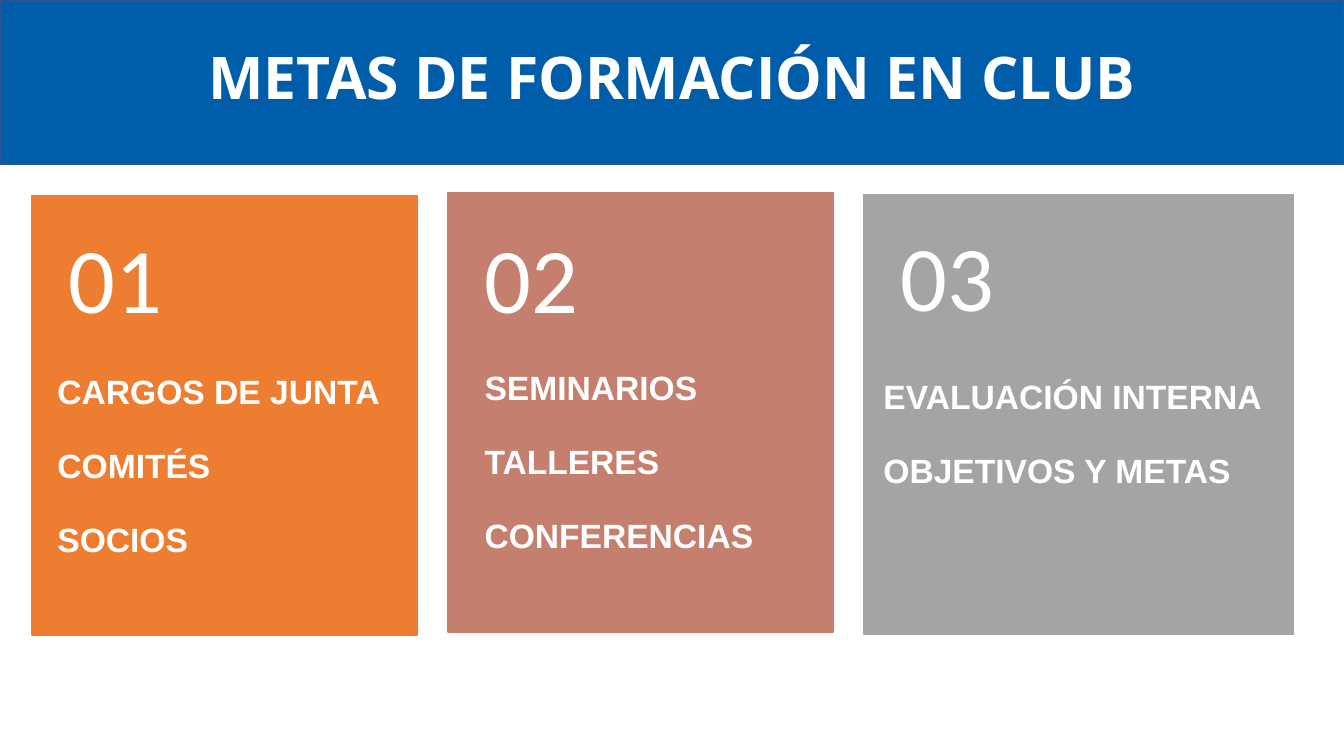
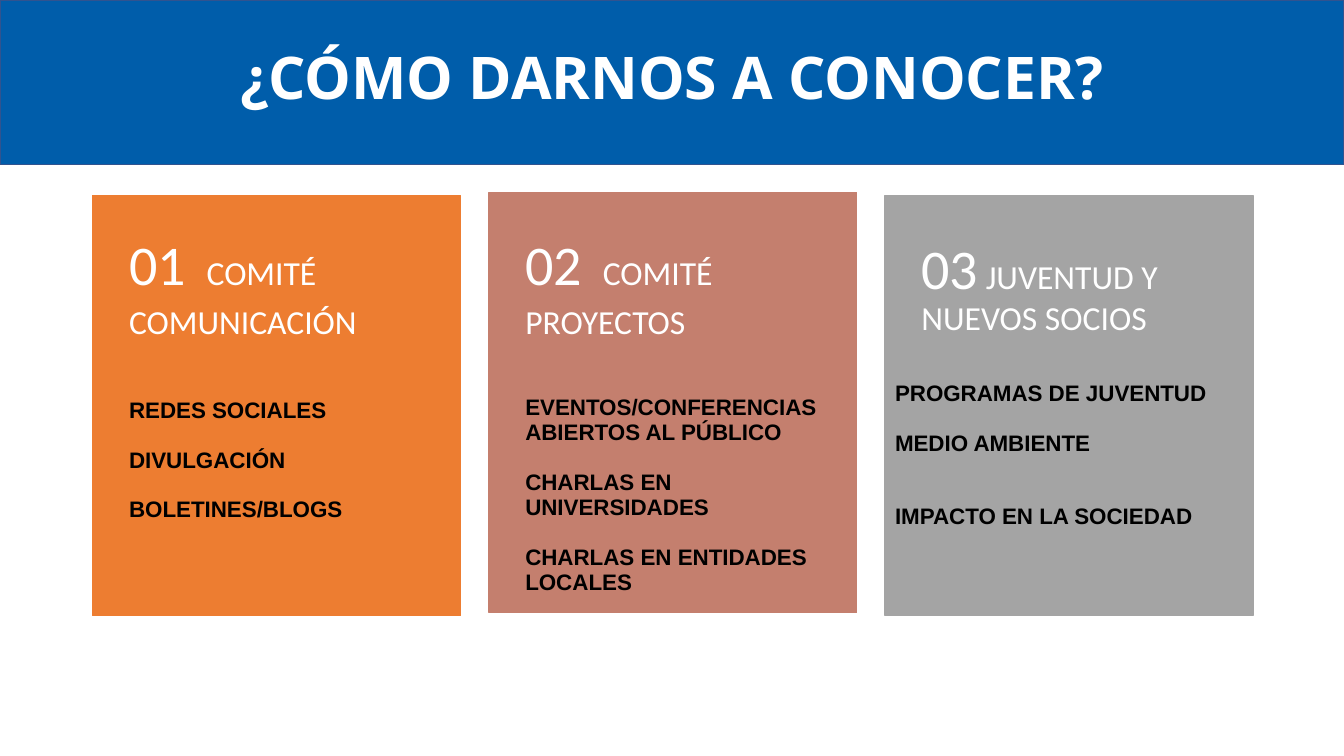
from pptx import Presentation
from pptx.dml.color import RGBColor
from pptx.enum.shapes import MSO_SHAPE
from pptx.enum.text import MSO_ANCHOR, PP_ALIGN
from pptx.util import Pt

WIDE, HIGH = 960, 540
BLUE, EDGE, WHITE, BLACK = "005DAA", "31538F", "FFFFFF", "000000"
FILLS = ["ED7D31", "C47F6E", "A4A4A4"]
TOP, MID, BASE = MSO_ANCHOR.TOP, MSO_ANCHOR.MIDDLE, MSO_ANCHOR.BOTTOM


def tint(code):
    return RGBColor.from_string(code)


def write(frame, paras, font="Arial", color=WHITE, bold=False, align=PP_ALIGN.LEFT,
          anchor=TOP, inset=(26, 0, 26, 0), lead=0.9, gap=0):
    frame.word_wrap = True
    frame.vertical_anchor = anchor
    (frame.margin_left, frame.margin_top,
     frame.margin_right, frame.margin_bottom) = [Pt(side) for side in inset]
    for index, runs in enumerate(paras):
        para = frame.add_paragraph() if index else frame.paragraphs[0]
        para.alignment = align
        para.line_spacing = lead
        para.space_before = Pt(gap if index else 0)
        for text, size in runs:
            run = para.add_run()
            run.text = text
            run.font.name = font
            run.font.size = Pt(size)
            run.font.bold = bold
            run.font.color.rgb = tint(color)


class Deck:
    """Hold the shared style and the slide being built."""

    def __init__(self):
        self.show = Presentation()
        self.show.slide_width, self.show.slide_height = Pt(WIDE), Pt(HIGH)
        self.slide = None

    def start(self, title):
        self.slide = self.show.slides.add_slide(self.show.slide_layouts[6])
        self.block(0, 0, WIDE, 117.5, BLUE, EDGE)
        write(self.box(0, 33.8, WIDE, 49.7), [[(title, 42)]], font="Open Sans",
              bold=True, align=PP_ALIGN.CENTER, anchor=BASE, inset=(7.2, 3.6, 7.2, 3.6))

    def block(self, left, top, width, height, fill, edge):
        shape = self.slide.shapes.add_shape(
            MSO_SHAPE.RECTANGLE, Pt(left), Pt(top), Pt(width), Pt(height))
        shape.shadow.inherit = False
        shape.fill.solid()
        shape.fill.fore_color.rgb = tint(fill)
        shape.line.color.rgb = tint(edge)
        shape.line.width = Pt(1)

    def box(self, left, top, width, height):
        return self.slide.shapes.add_textbox(
            Pt(left), Pt(top), Pt(width), Pt(height)).text_frame

    def head(self, left, top, width, height, runs):
        write(self.box(left, top, width, height), [runs], font="Calibri",
              anchor=MID, inset=(26, 13, 26, 13))

    def points(self, left, top, width, items, size, color, inset):
        write(self.box(left, top, width, 165), [[(item, size)] for item in items],
              color=color, bold=True, lead=0.94, gap=size * 1.08,
              inset=(inset, 0, 7.2, 0))


def goals(deck):
    deck.start("METAS DE FORMACIÓN EN CLUB")
    cards = [
        (139.7, 275, 139.7, 267, 18, ["CARGOS DE JUNTA", "COMITÉS", "SOCIOS"]),
        (137.5, 275, 139.7, 264.3, 26, ["SEMINARIOS", "TALLERES", "CONFERENCIAS"]),
        (139, 306.7, 138.2, 271, 13.9, ["EVALUACIÓN INTERNA", "OBJETIVOS Y METAS"]),
    ]
    for index, (top, width, high, low, inset, items) in enumerate(cards):
        left = 23 + 297.1 * index
        deck.block(left, top, width, 314, FILLS[index], FILLS[index])
        deck.head(left, high, 275, 125.3, [(f"0{index + 1}", 66)])
        deck.points(left, low, width, items, 24, WHITE, inset)


def reach(deck):
    deck.start("¿CÓMO DARNOS A CONOCER?")
    cards = [
        (139.7, 139.7, 284.7, 26, [(" ", 66), ("COMITÉ COMUNICACIÓN", 24)],
         ["REDES SOCIALES", "DIVULGACIÓN", "BOLETINES/BLOGS"]),
        (137.5, 139.7, 282.5, 26, [(" ", 66), ("COMITÉ PROYECTOS", 24)],
         ["EVENTOS/CONFERENCIAS ABIERTOS AL PÚBLICO", "CHARLAS EN UNIVERSIDADES",
          "CHARLAS EN ENTIDADES LOCALES"]),
        (139.7, 150.5, 272.5, 7.2, [(" JUVENTUD Y NUEVOS SOCIOS", 24)],
         ["PROGRAMAS DE JUVENTUD", "MEDIO AMBIENTE", "IMPACTO EN LA SOCIEDAD"]),
    ]
    for index, (top, high, low, inset, name, items) in enumerate(cards):
        left = 66.2 + 283 * index
        deck.block(left, top, 262.8, 300.2, FILLS[index], FILLS[index])
        deck.head(left, high, 262.8, 112.3, [(f"0{index + 1}", 40)] + name)
        deck.points(left, low, 262.8, items, 16, BLACK, inset)
    last = deck.slide.shapes[-1].text_frame.paragraphs[-1]
    last.space_before = Pt(34.5)


def main():
    deck = Deck()
    goals(deck)
    reach(deck)
    deck.show.save("out.pptx")


if __name__ == "__main__":
    main()
